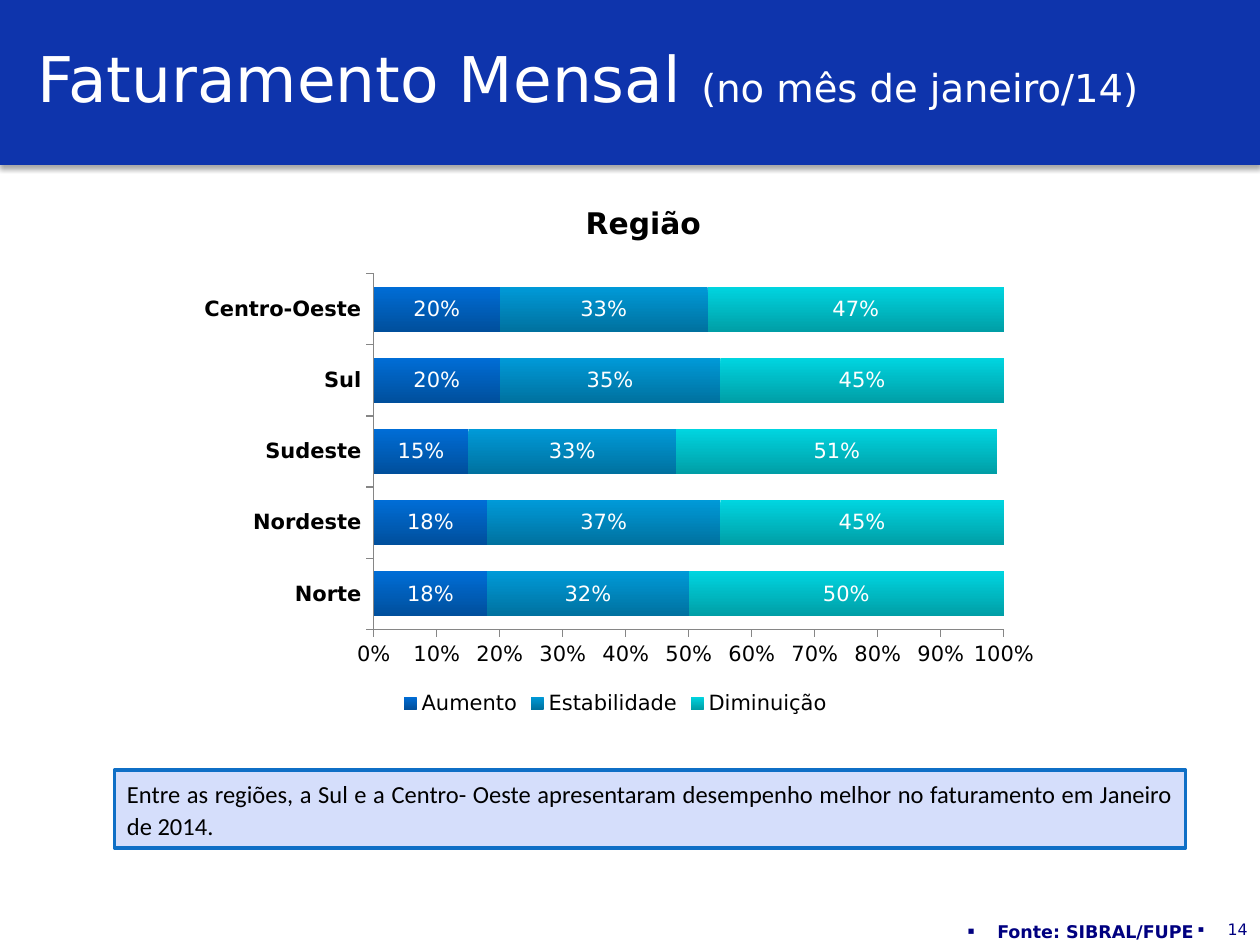
from dataclasses import dataclass

from lxml.etree import SubElement
from pptx import Presentation
from pptx.chart.data import CategoryChartData
from pptx.dml.color import RGBColor
from pptx.enum.chart import XL_CHART_TYPE, XL_LABEL_POSITION, XL_LEGEND_POSITION, XL_TICK_MARK
from pptx.enum.shapes import MSO_SHAPE
from pptx.enum.text import MSO_ANCHOR, MSO_AUTO_SIZE, PP_ALIGN
from pptx.oxml.ns import qn
from pptx.util import Pt

COLORS = {
    "band": "0E34AC", "white": "FFFFFF", "black": "000000", "navy": "000080",
    "note": "D5DEFB", "border": "0F6FC6", "axis": "868686",
}
FONT = "DejaVu Sans"
REGIONS = ["Norte", "Nordeste", "Sudeste", "Sul", "Centro-Oeste"]


@dataclass
class Area:
    left: float
    top: float
    width: float
    height: float

    def lengths(self):
        return [Pt(value) for value in (self.left, self.top, self.width, self.height)]


@dataclass
class Answer:
    name: str
    values: list[float]
    upper: str
    lower: str


ANSWERS = [
    Answer("Aumento", [0.18, 0.18, 0.15, 0.2, 0.2], "006DD6", "004F9C"),
    Answer("Estabilidade", [0.32, 0.37, 0.33, 0.35, 0.33], "009AD8", "00719F"),
    Answer("Diminuição", [0.5, 0.45, 0.51, 0.45, 0.47], "00D5E0", "009EA6"),
]


def color(name: str) -> RGBColor:
    return RGBColor.from_string(COLORS[name])


def add_span(para, text: str, *, size: float, ink: str = "black",
             font: str = FONT, bold: bool = False) -> None:
    span = para.add_run()
    span.text = text
    span.font.size = Pt(size)
    span.font.name = font
    span.font.bold = bold
    span.font.color.rgb = color(ink)


def write(box, text: str, *, align, spacing: float = 1.0, grow: bool = False,
          bullet: bool = False, **span_format) -> None:
    frame = box.text_frame
    frame.word_wrap = True
    frame.vertical_anchor = MSO_ANCHOR.TOP
    frame.auto_size = MSO_AUTO_SIZE.SHAPE_TO_FIT_TEXT if grow else MSO_AUTO_SIZE.NONE
    para = frame.paragraphs[0]
    para.alignment = align
    para.line_spacing = spacing
    add_span(para, text, **span_format)
    if bullet:
        para.space_before = Pt(2)
        properties = para._p.get_or_add_pPr()
        properties.set("marL", str(Pt(17)))
        properties.set("indent", str(-Pt(17)))
        SubElement(properties, qn("a:buSzPct"), val="60000")
        SubElement(properties, qn("a:buFont"), typeface=FONT)
        SubElement(properties, qn("a:buChar"), char="▪")


def add_rectangle(page, area: Area, fill: str):
    box = page.shapes.add_shape(MSO_SHAPE.RECTANGLE, *area.lengths())
    box.shadow.inherit = False
    box.fill.solid()
    box.fill.fore_color.rgb = color(fill)
    box.line.fill.background()
    return box


def add_header(page) -> None:
    title = page.shapes.title
    band = add_rectangle(page, Area(0, 0, 720, 94.3), "band")
    effects = band._element.spPr.find(qn("a:effectLst"))
    shadow = SubElement(effects, qn("a:outerShdw"), blurRad=str(Pt(3.1)),
                        dist=str(Pt(1.8)), dir="5400000", rotWithShape="0")
    tint = SubElement(shadow, qn("a:srgbClr"), val=COLORS["black"])
    SubElement(tint, qn("a:alpha"), val="35000")
    title._element.addprevious(band._element)

    title.left, title.top, title.width, title.height = Area(14.4, 5.8, 712, 77).lengths()
    title.text_frame.vertical_anchor = MSO_ANCHOR.MIDDLE
    title.text_frame.auto_size = MSO_AUTO_SIZE.NONE
    para = title.text_frame.paragraphs[0]
    para.alignment = PP_ALIGN.LEFT
    add_span(para, "Faturamento Mensal ", size=36, ink="white")
    add_span(para, "(no mês de janeiro/14)", size=22, ink="white")


def style_axis(axis) -> None:
    axis.has_major_gridlines = False
    axis.major_tick_mark = XL_TICK_MARK.OUTSIDE
    axis.minor_tick_mark = XL_TICK_MARK.NONE
    axis.format.line.color.rgb = color("axis")
    axis.format.line.width = Pt(0.75)


def set_plot_layout(chart, **fractions: float) -> None:
    area = chart._chartSpace.chart.plotArea
    for old in area.findall(qn("c:layout")):
        area.remove(old)
    layout = area.makeelement(qn("c:layout"))
    area.insert(0, layout)
    manual = SubElement(layout, qn("c:manualLayout"))
    SubElement(manual, qn("c:layoutTarget"), val="inner")
    for side in ("x", "y"):
        SubElement(manual, qn(f"c:{side}Mode"), val="edge")
    for side, fraction in fractions.items():
        SubElement(manual, qn(f"c:{side}"), val=str(fraction))


def add_region_chart(page, area: Area) -> None:
    data = CategoryChartData(number_format="0%")
    data.categories = REGIONS
    for answer in ANSWERS:
        data.add_series(answer.name, answer.values)
    chart = page.shapes.add_chart(XL_CHART_TYPE.BAR_STACKED, *area.lengths(), data).chart
    chart.has_title = False
    chart.font.size = Pt(12)
    chart.font.name = FONT
    chart.font.color.rgb = color("black")
    chart.has_legend = True
    chart.legend.position = XL_LEGEND_POSITION.BOTTOM
    chart.legend.include_in_layout = False

    style_axis(chart.category_axis)
    style_axis(chart.value_axis)
    chart.category_axis.tick_labels.font.bold = True
    chart.value_axis.minimum_scale = 0
    chart.value_axis.maximum_scale = 1
    chart.value_axis.major_unit = 0.1
    chart.value_axis.tick_labels.number_format = "0%"
    chart.value_axis.tick_labels.number_format_is_linked = False

    plot = chart.plots[0]
    plot.gap_width = 58
    plot.overlap = 100
    plot.vary_by_categories = False
    for series, answer in zip(plot.series, ANSWERS):
        fill = series.format.fill
        fill.gradient()
        fill.gradient_angle = 270
        for stop, tone in zip(fill.gradient_stops, (answer.upper, answer.lower)):
            stop.color.rgb = RGBColor.from_string(tone)
        labels = series.data_labels
        labels.show_value = True
        labels.number_format = "0%"
        labels.number_format_is_linked = False
        labels.position = XL_LABEL_POSITION.CENTER
        labels.font.size = Pt(12)
        labels.font.color.rgb = color("white")
    set_plot_layout(chart, x=0.22, y=0.02, w=0.73, h=0.78)


def main() -> None:
    deck = Presentation()
    deck.slide_width, deck.slide_height = Pt(720), Pt(540)
    page = deck.slides.add_slide(deck.slide_layouts[5])
    add_header(page)

    heading = page.shapes.add_textbox(*Area(297.4, 111.6, 140.4, 30.2).lengths())
    write(heading, "Região", align=PP_ALIGN.CENTER, spacing=1.1, grow=True, size=17, bold=True)

    note = add_rectangle(page, Area(65.5, 440, 612, 44.6), "note")
    note.line.color.rgb = color("border")
    note.line.width = Pt(2)
    write(note, "Entre as regiões, a Sul e a Centro- Oeste apresentaram desempenho melhor "
          "no faturamento em Janeiro de 2014.", align=PP_ALIGN.JUSTIFY, spacing=1.1,
          grow=True, size=14, font="Calibri")

    number = page.shapes.add_textbox(*Area(634.3, 522, 85.7, 18).lengths())
    write(number, "14", align=PP_ALIGN.RIGHT, bullet=True, size=9, ink="navy")
    source = page.shapes.add_textbox(*Area(337.7, 522.7, 351.4, 17.3).lengths())
    write(source, "Fonte: SIBRAL/FUPE", align=PP_ALIGN.RIGHT, bullet=True,
          size=10, ink="navy", bold=True)

    add_region_chart(page, Area(105.1, 151.2, 493.2, 260.6))
    deck.save("out.pptx")


if __name__ == "__main__":
    main()
